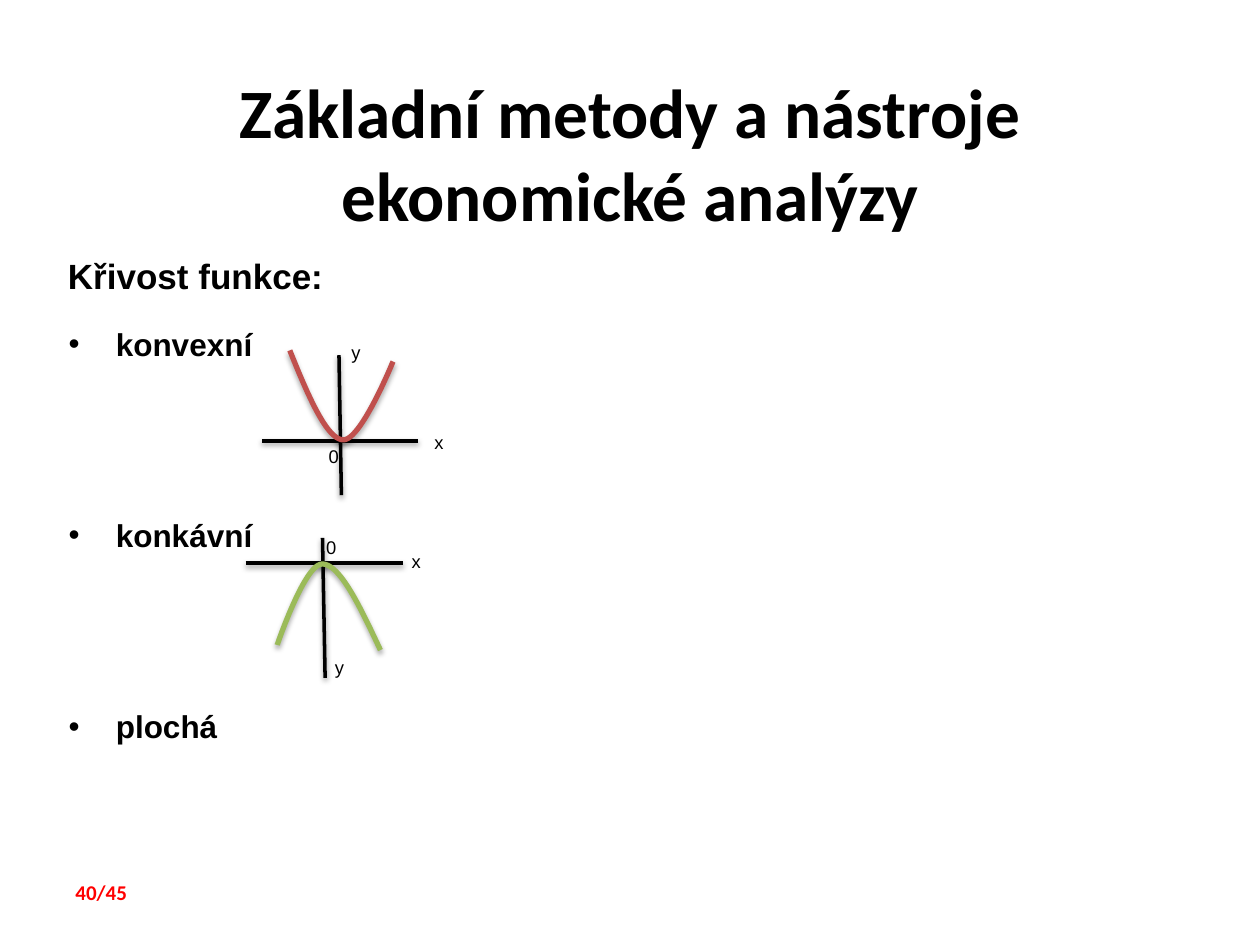
from lxml.etree import SubElement
from pptx import Presentation
from pptx.dml.color import RGBColor
from pptx.enum.shapes import MSO_CONNECTOR
from pptx.enum.text import MSO_ANCHOR, MSO_AUTO_SIZE, PP_ALIGN
from pptx.oxml.ns import qn
from pptx.util import Pt

COLORS = {"black": "000000", "red": "FF0000", "convex": "C0504D", "concave": "9BBB59"}
TITLE = "Základní metody a nástroje ekonomické analýzy"
# text, size, space before, left margin, indent, bullet
BODY = [
    ("Křivost funkce:", 20, 0, 8.64, 0, False),
    ("konvexní", 18, 5.5, 36, -27, True),
    ("konkávní", 18, 77, 36, -27, True),
    ("plochá", 18, 77, 36, -27, True),
]
AXES = [
    (193.7, 203, 195.1, 283),
    (149.8, 252, 239, 252),
    (140.4, 321.8, 230.4, 321.8),
    (184.3, 307.4, 185.8, 387.4),
]
LABELS = [
    ("x", 228.2, 311), ("x", 241.2, 242.6),
    ("y", 193.7, 191.5), ("y", 184.3, 371.5),
    ("0", 180.7, 250.6), ("0", 179.3, 303.1),
]
CURVES = [
    ("convex", [(165.6, 200.2), (175.7, 225.4), (186.5, 250.6), (195.8, 251.3),
                (205.9, 252.7), (224.6, 206.6), (224.6, 206.6)]),
    ("concave", [(217.4, 371.5), (205.9, 347), (194.4, 322.6), (184.3, 322.3),
                 (174.2, 321.8), (158.4, 368.6), (158.4, 368.6)]),
]
STEPS = 24


def color(name):
    return RGBColor.from_string(COLORS[name])


def add_run(p, text, font, size, name="black", bold=False):
    r = p.add_run()
    r.text = text
    r.font.name, r.font.size, r.font.bold = font, Pt(size), bold
    r.font.color.rgb = color(name)


def place(sp, left, top, width, height):
    sp.left, sp.top, sp.width, sp.height = Pt(left), Pt(top), Pt(width), Pt(height)


def style_line(sp, name, width, dist, alpha):
    sp.line.color.rgb, sp.line.width = color(name), Pt(width)
    effects = SubElement(sp._element.spPr, qn("a:effectLst"))
    shadow = SubElement(effects, qn("a:outerShdw"), blurRad=str(Pt(3.1)),
                        dist=str(Pt(dist)), dir="5400000", rotWithShape="0")
    clr = SubElement(shadow, qn("a:srgbClr"), val=COLORS["black"])
    SubElement(clr, qn("a:alpha"), val=str(alpha * 1000))


def set_bullet(p, left, indent, bullet):
    pPr = p._p.get_or_add_pPr()
    pPr.set("marL", str(Pt(left)))
    pPr.set("indent", str(Pt(indent)))
    if bullet:
        clr = SubElement(pPr, qn("a:buClr"))
        SubElement(clr, qn("a:srgbClr"), val=COLORS["black"])
        SubElement(pPr, qn("a:buFont"), typeface="Arial")
        SubElement(pPr, qn("a:buChar"), char="•")
    else:
        SubElement(pPr, qn("a:buNone"))


def bezier(points):
    result = [points[0]]
    for i in range(0, len(points) - 1, 3):
        for k in range(1, STEPS + 1):
            t = k / STEPS
            weights = ((1 - t) ** 3, 3 * t * (1 - t) ** 2, 3 * t * t * (1 - t), t ** 3)
            result.append(tuple(sum(w * pt[axis] for w, pt in zip(weights, points[i:i + 4]))
                                for axis in (0, 1)))
    return result


def add_text(s, text, box, font, size, name="black", bold=False, wrap=False):
    tf = s.shapes.add_textbox(*map(Pt, box)).text_frame
    tf.word_wrap = wrap
    tf.auto_size = MSO_AUTO_SIZE.SHAPE_TO_FIT_TEXT
    add_run(tf.paragraphs[0], text, font, size, name, bold)


def main():
    """Build the slide on the curvature of functions."""
    prs = Presentation()
    prs.slide_width, prs.slide_height = Pt(720), Pt(540)
    s = prs.slides.add_slide(prs.slide_layouts[1])

    title, body = s.shapes.title, s.placeholders[1]
    place(title, 36, 41.8, 648, 90)
    tf = title.text_frame
    tf.vertical_anchor, tf.auto_size = MSO_ANCHOR.MIDDLE, MSO_AUTO_SIZE.NONE
    tf.paragraphs[0].alignment = PP_ALIGN.CENTER
    add_run(tf.paragraphs[0], TITLE, "Calibri", 39.6, bold=True)

    place(body, 23, 129.6, 679, 307.4)
    tf = body.text_frame
    tf.auto_size = MSO_AUTO_SIZE.NONE
    for i, (text, size, before, left, indent, bullet) in enumerate(BODY):
        p = tf.add_paragraph() if i else tf.paragraphs[0]
        p.alignment, p.line_spacing, p.space_before = PP_ALIGN.JUSTIFY, 1.5, Pt(before)
        set_bullet(p, left, indent, bullet)
        add_run(p, text, "Arial", size, bold=True)

    for axis in AXES:
        line = s.shapes.add_connector(MSO_CONNECTOR.STRAIGHT, *map(Pt, axis))
        style_line(line, "black", 2, 1.6, 38)
    for text, left, top in LABELS:
        add_text(s, text, (left, top, 20, 20), "Arial", 10.5)
    for name, points in CURVES:
        start, *rest = [(Pt(x), Pt(y)) for x, y in bezier(points)]
        fb = s.shapes.build_freeform(*start)
        fb.add_line_segments(rest, close=False)
        sp = fb.convert_to_shape()
        sp.fill.background()
        style_line(sp, name, 3, 1.8, 35)

    add_text(s, "40/45", (36, 499, 66.2, 21.6), "Calibri", 12, "red", True, True)
    prs.save("out.pptx")


if __name__ == "__main__":
    main()
